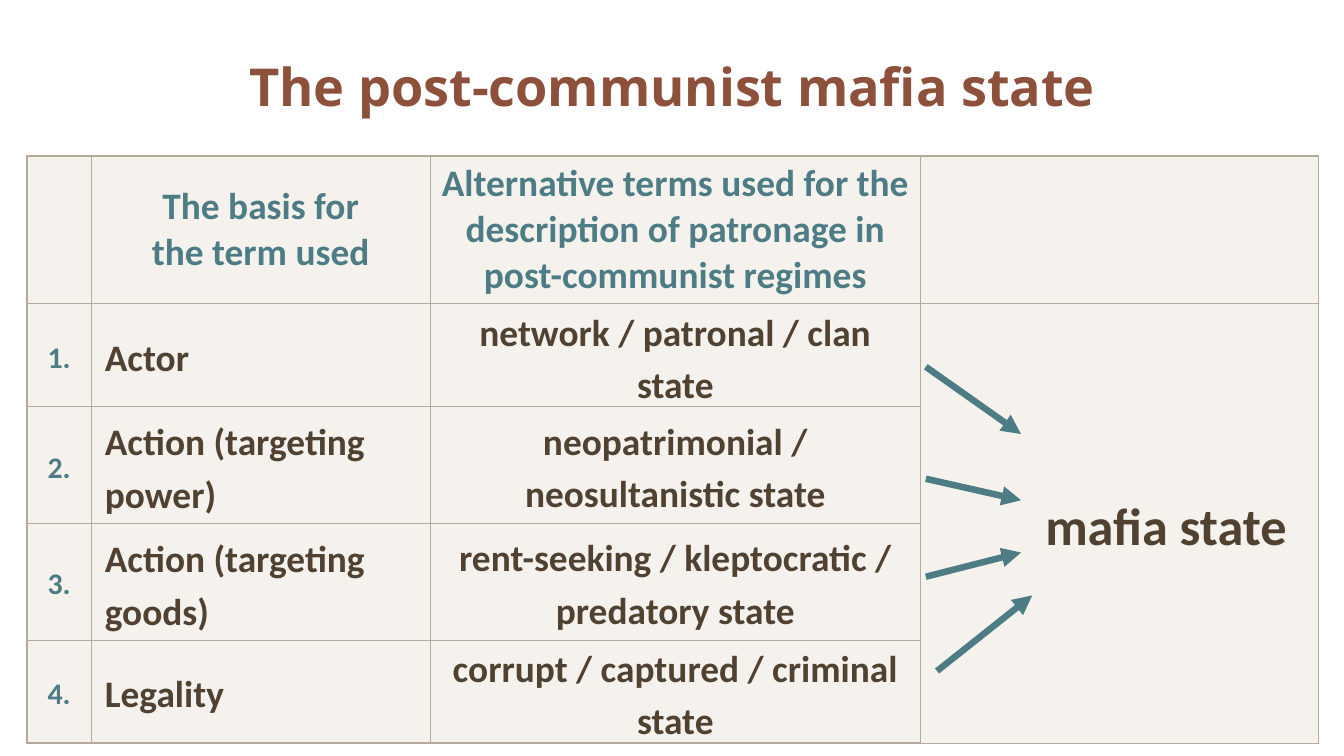
from lxml.etree import SubElement
from pptx import Presentation
from pptx.dml.color import RGBColor
from pptx.enum.shapes import MSO_CONNECTOR as Connector
from pptx.enum.text import MSO_ANCHOR as Anchor, PP_ALIGN as Align
from pptx.oxml import parse_xml
from pptx.oxml.ns import nsdecls, qn
from pptx.util import Pt

COLORS = {"title": "8D503B", "teal": "4D7C85", "brown": "504131",
          "cell": "EFEAE4", "border": "B3A99D"}
COLUMN_WIDTHS = [34.56, 181.44, 262.8, 213.12]
ROW_HEIGHTS = [79.2] + [38.16] * 4
HEADINGS = ["The basis for\nthe term used",
            "Alternative terms used for the description of patronage in "
            "post-communist regimes"]
TERMS = [("Actor", "network / patronal / clan state"),
         ("Action (targeting power)", "neopatrimonial / neosultanistic state"),
         ("Action (targeting goods)", "rent-seeking / kleptocratic / predatory state"),
         ("Legality", "corrupt / captured / criminal state")]
ARROWS = [((0, 0), (51, 36)), ((0, 60), (51, 71.5)),
          ((0, 112.5), (51, 99.5)), ((6, 163), (57, 122.5))]


def color(name):
    return RGBColor.from_string(COLORS[name])


def write(frame, text, size, ink, font="Calibri", align=Align.CENTER, spacing=None):
    frame.text = text
    for para in frame.paragraphs:
        para.alignment = align
        if spacing:
            para.line_spacing = spacing
        for span in para.runs:
            span.font.name = font
            span.font.size = Pt(size)
            span.font.bold = True
            span.font.color.rgb = color(ink)


def fill_cell(cell, text, size, ink, insets=(5, 0), **style):
    cell.margin_left = cell.margin_right = Pt(insets[0])
    cell.margin_top = cell.margin_bottom = Pt(insets[1])
    write(cell.text_frame, text, size, ink, **style)


def paint_cell(cell, outer_sides):
    cell.vertical_anchor = Anchor.MIDDLE
    cell.fill.solid()
    cell.fill.fore_color.rgb = color("cell")
    properties = cell._tc.get_or_add_tcPr()
    SubElement(properties.find(".//" + qn("a:srgbClr")), qn("a:alpha"), val="60000")
    for index, side in enumerate("LRTB"):
        width = Pt(1 if side in outer_sides else 0.5)
        properties.insert(index, parse_xml(
            f'<a:ln{side} {nsdecls("a")} w="{width}"><a:solidFill>'
            f'<a:srgbClr val="{COLORS["border"]}"/></a:solidFill></a:ln{side}>'))


def add_title(page, left, top, width, height):
    box = page.shapes.add_textbox(Pt(left), Pt(top), Pt(width), Pt(height))
    box.text_frame.word_wrap = True
    box.text_frame.vertical_anchor = Anchor.MIDDLE
    write(box.text_frame, "The post-communist mafia state", 28, "title", font="Open Sans")


def add_terms_table(page, left, top, width, height):
    rows, columns = len(ROW_HEIGHTS), len(COLUMN_WIDTHS)
    holder = page.shapes.add_table(rows, columns, Pt(left), Pt(top), Pt(width), Pt(height))
    table = holder.table
    table.first_row = table.horz_banding = False
    for column, size in zip(table.columns, COLUMN_WIDTHS):
        column.width = Pt(size)
    for row, size in zip(table.rows, ROW_HEIGHTS):
        row.height = Pt(size)
    holder.height = Pt(height)

    for r in range(rows):
        for c in range(columns):
            edges = {"L": c == 0, "R": c == columns - 1, "T": r == 0, "B": r == rows - 1}
            paint_cell(table.cell(r, c), [side for side, outer in edges.items() if outer])

    fill_cell(table.cell(0, 1), HEADINGS[0], 20, "teal", insets=(3.6, 3.6))
    fill_cell(table.cell(0, 2), HEADINGS[1], 20, "teal")
    for r, (basis, term) in enumerate(TERMS, 1):
        fill_cell(table.cell(r, 0), f"{r}.", 16, "teal", spacing=1.15)
        fill_cell(table.cell(r, 1), basis, 20, "brown", insets=(7.2, 3.6),
                  align=Align.LEFT, spacing=1.15)
        fill_cell(table.cell(r, 2), term, 20, "brown", spacing=1.15)

    result = table.cell(1, 3)
    result.merge(table.cell(rows - 1, 3))
    fill_cell(result, "mafia state", 28, "brown", spacing=1.15)
    indent = result.text_frame.paragraphs[0]._p.get_or_add_pPr()
    indent.set("marL", str(Pt(49.68)))
    indent.set("indent", "0")


def add_arrows(page, left, top):
    for (x1, y1), (x2, y2) in ARROWS:
        arrow = page.shapes.add_connector(Connector.STRAIGHT, Pt(left + x1), Pt(top + y1),
                                          Pt(left + x2), Pt(top + y2))
        arrow.line.color.rgb = color("teal")
        arrow.line.width = Pt(3.5)
        SubElement(arrow.line._get_or_add_ln(), qn("a:tailEnd"), type="triangle")
        SubElement(arrow._element.spPr, qn("a:effectLst"))


def main():
    deck = Presentation()
    deck.slide_width, deck.slide_height = Pt(720), Pt(405)
    page = deck.slides.add_slide(deck.slide_layouts[6])
    add_title(page, 8.64, 10.08, 702.72, 72)
    add_terms_table(page, 14.4, 83.52, 691.92, 314.64)
    add_arrows(page, 496, 196.5)
    deck.save("out.pptx")


if __name__ == "__main__":
    main()
